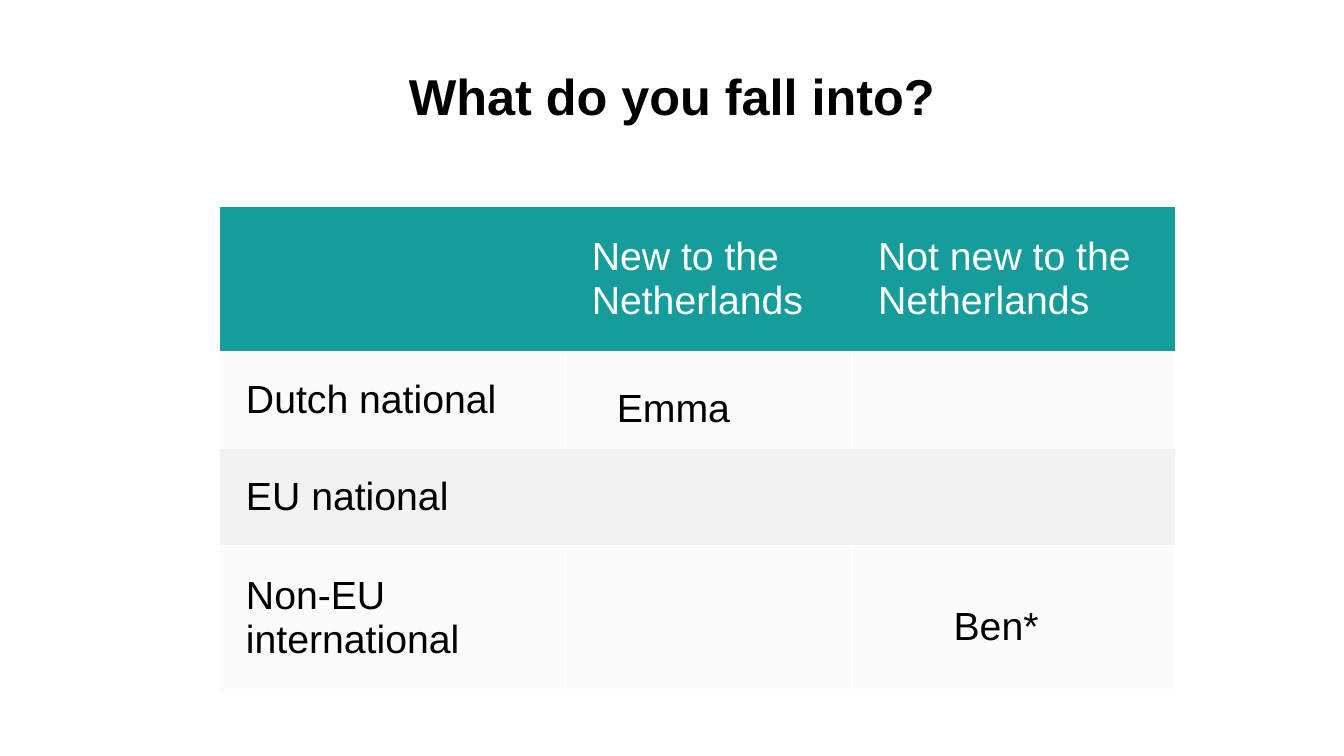
from dataclasses import dataclass

from lxml import etree
from pptx import Presentation
from pptx.dml.color import RGBColor
from pptx.enum.text import MSO_ANCHOR, PP_ALIGN
from pptx.oxml.ns import qn
from pptx.util import Inches, Pt

CENTER = PP_ALIGN.CENTER
TOP, MIDDLE, BOTTOM = MSO_ANCHOR.TOP, MSO_ANCHOR.MIDDLE, MSO_ANCHOR.BOTTOM


@dataclass(frozen=True)
class Theme:
    font: str = "Arial"
    title_size: int = 36
    body_size: int = 28
    text: str = "000000"
    header_text: str = "FFFFFF"
    header_fill: str = "169C9A"
    light_fill: str = "FBFBFB"
    dark_fill: str = "F2F2F2"
    border: str = "FFFFFF"


THEME = Theme()

COLUMN_WIDTHS = [3.43, 2.84, 3.2]
ROW_HEIGHTS = [1.44, 0.96, 0.96, 1.44]
CATEGORIES = [
    ["", "New to the Netherlands", "Not new to the Netherlands"],
    ["Dutch national", "", ""],
    ["EU national", "", ""],
    ["Non-EU international", "", ""],
]
# Name, row, column, and offset from the corner of that cell
PEOPLE = [("Emma", 1, 1, 0.41, 0.26), ("Ben*", 3, 2, 0.91, 0.51)]


def style_paragraph(paragraph, size, color, bold=False):
    font = paragraph.font
    font.name, font.size, font.bold = THEME.font, Pt(size), bold
    font.color.rgb = RGBColor.from_string(color)


def add_label(slide, text, box, size, bold=False, anchor=TOP):
    """Add a one-line text box and return its paragraph."""
    frame = slide.shapes.add_textbox(*map(Inches, box)).text_frame
    frame.word_wrap = True
    frame.vertical_anchor = anchor
    paragraph = frame.paragraphs[0]
    paragraph.text = text
    style_paragraph(paragraph, size, THEME.text, bold)
    return paragraph


def add_title(slide, box):
    paragraph = add_label(slide, "What do you fall into?", box,
                          THEME.title_size, bold=True, anchor=BOTTOM)
    paragraph.alignment = CENTER
    paragraph.line_spacing = 0.9


def add_side_borders(cell, sides):
    """Draw thin borders on the given sides, "L" before "R"."""
    properties = cell._tc.get_or_add_tcPr()
    for position, side in enumerate(sides):
        line = etree.Element(qn(f"a:ln{side}"), w=str(Pt(1)))
        fill = etree.SubElement(line, qn("a:solidFill"))
        etree.SubElement(fill, qn("a:srgbClr"), val=THEME.border)
        properties.insert(position, line)


def fill_cell(cell, text, fill, color):
    cell.fill.solid()
    cell.fill.fore_color.rgb = RGBColor.from_string(fill)
    cell.vertical_anchor = MIDDLE
    cell.margin_left = Inches(0.26)
    cell.margin_top = cell.margin_right = cell.margin_bottom = Inches(0.2)
    paragraph = cell.text_frame.paragraphs[0]
    paragraph.text = text
    style_paragraph(paragraph, THEME.body_size, color)


def add_category_table(slide, left, top):
    box = (left, top, sum(COLUMN_WIDTHS), sum(ROW_HEIGHTS))
    table = slide.shapes.add_table(len(ROW_HEIGHTS), len(COLUMN_WIDTHS),
                                   *map(Inches, box)).table
    table.first_row = table.horz_banding = False
    for column, width in zip(table.columns, COLUMN_WIDTHS):
        column.width = Inches(width)

    row_fills = [THEME.header_fill, THEME.light_fill, THEME.dark_fill, THEME.light_fill]
    column_sides = ["R", "LR", "L"]
    for row_index, (texts, fill) in enumerate(zip(CATEGORIES, row_fills)):
        table.rows[row_index].height = Inches(ROW_HEIGHTS[row_index])
        color = THEME.text if row_index else THEME.header_text
        for column_index, text in enumerate(texts):
            cell = table.cell(row_index, column_index)
            fill_cell(cell, text, fill, color)
            if fill == THEME.light_fill:
                add_side_borders(cell, column_sides[column_index])
            else:
                hide_side_borders(cell)


def hide_side_borders(cell):
    """Cover the borders that the table style would draw."""
    properties = cell._tc.get_or_add_tcPr()
    for position, side in enumerate("LRTB"):
        line = etree.Element(qn(f"a:ln{side}"), w="0")
        etree.SubElement(line, qn("a:noFill"))
        properties.insert(position, line)


def add_people(slide, left, top):
    """Place each name over its cell in the table at left, top."""
    for name, row, column, offset_x, offset_y in PEOPLE:
        x = left + sum(COLUMN_WIDTHS[:column]) + offset_x
        y = top + sum(ROW_HEIGHTS[:row]) + offset_y
        add_label(slide, name, (x, y, 1.78, 0.57), THEME.body_size)


def main():
    presentation = Presentation()
    presentation.slide_width, presentation.slide_height = Inches(13.33), Inches(7.5)
    slide = presentation.slides.add_slide(presentation.slide_layouts[6])
    table_corner = (2.18, 2.05)
    add_title(slide, (1.89, 0.55, 9.55, 0.75))
    add_category_table(slide, *table_corner)
    add_people(slide, *table_corner)
    presentation.save("out.pptx")


if __name__ == "__main__":
    main()
